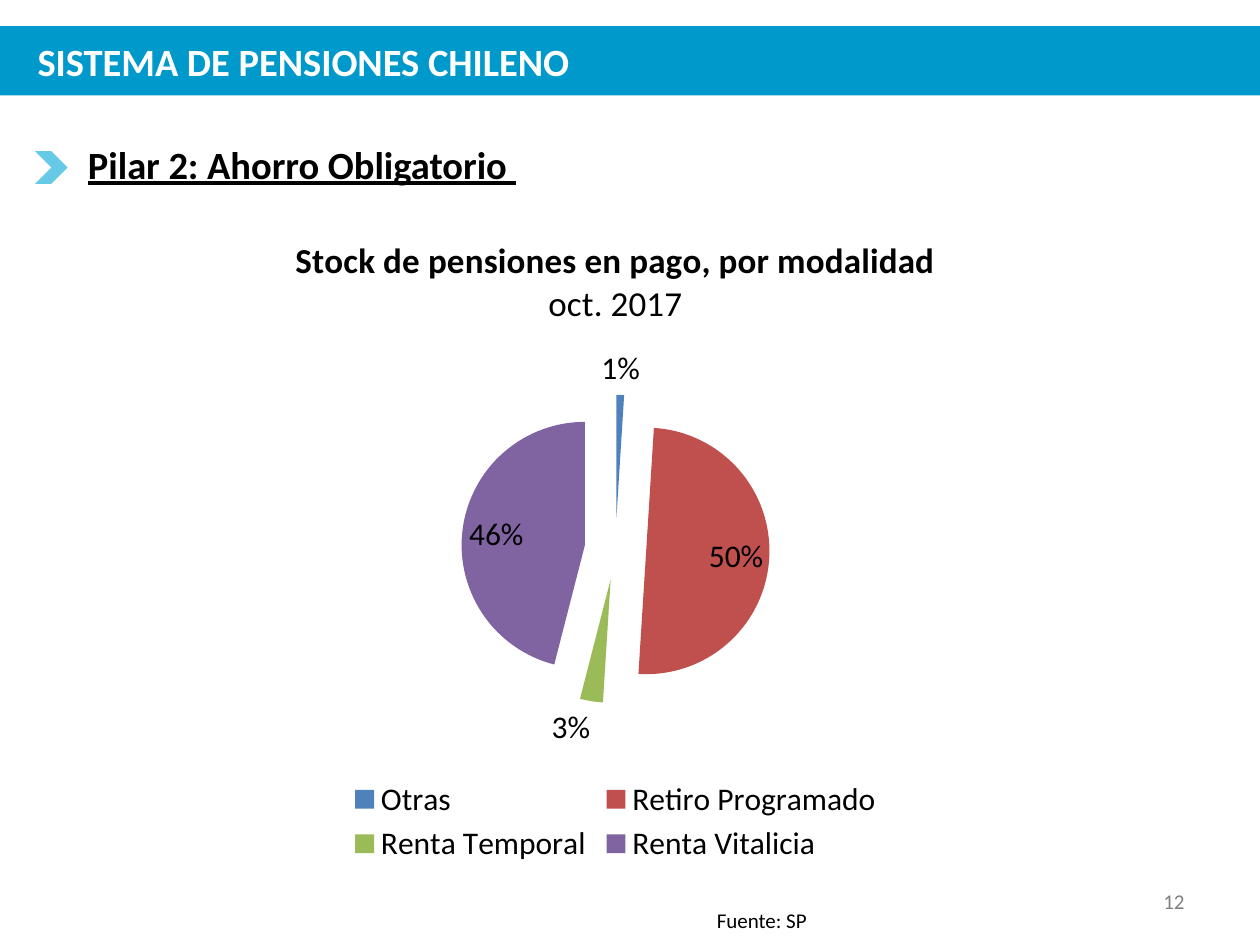
from dataclasses import dataclass

import pptx
import pptx.chart.data
import pptx.dml.color
import pptx.enum.chart
import pptx.enum.shapes
import pptx.enum.text
import pptx.oxml
import pptx.oxml.ns
import pptx.util

Pt = pptx.util.Pt
RGBColor = pptx.dml.color.RGBColor
Shape = pptx.enum.shapes.MSO_SHAPE
Align = pptx.enum.text.PP_ALIGN
Anchor = pptx.enum.text.MSO_ANCHOR

FONT = "Calibri"
BLACK = RGBColor(0, 0, 0)
WHITE = RGBColor(0xFF, 0xFF, 0xFF)
GRAY = RGBColor(0x80, 0x80, 0x80)
BAND = RGBColor(0x00, 0x99, 0xCC)
CHEVRON = RGBColor(0x00, 0xA6, 0xD6)
BLUE = RGBColor(0x4F, 0x81, 0xBD)
RED = RGBColor(0xC0, 0x50, 0x4D)
GREEN = RGBColor(0x9B, 0xBB, 0x59)
PURPLE = RGBColor(0x80, 0x64, 0xA2)


@dataclass
class Box:
    left: float
    top: float
    width: float
    height: float

    def pts(self) -> list:
        return [Pt(v) for v in (self.left, self.top, self.width, self.height)]


@dataclass
class Label:
    text: str
    box: Box
    size: float
    color: RGBColor = BLACK
    bold: bool = False
    underline: bool = False
    align: Align = Align.LEFT
    anchor: Anchor = Anchor.TOP


@dataclass
class Slice:
    name: str
    percent: int
    color: RGBColor


LABELS = [
    Label("SISTEMA DE PENSIONES CHILENO", Box(14.4, 15, 648, 39.6), 22, WHITE,
          bold=True, anchor=Anchor.MIDDLE),
    Label("Pilar 2: Ahorro Obligatorio ", Box(43.2, 77, 628.5, 34), 22,
          bold=True, underline=True, align=Align.JUSTIFY),
    Label("Fuente: SP", Box(402.5, 514.8, 275, 21.8), 12),
    Label("12", Box(516, 500.5, 168, 28.8), 12, GRAY,
          align=Align.RIGHT, anchor=Anchor.MIDDLE),
]
SLICES = [
    Slice("Otras", 1, BLUE),
    Slice("Retiro Programado", 50, RED),
    Slice("Renta Temporal", 3, GREEN),
    Slice("Renta Vitalicia", 46, PURPLE),
]
TITLE_LINES = [("Stock de pensiones en pago, por modalidad", True), ("oct. 2017", False)]
EXPLOSION = 25


def set_font(font, size: float, color: RGBColor = BLACK, **extra) -> None:
    values = {"name": FONT, "size": Pt(size), **extra}
    for name, value in values.items():
        setattr(font, name, value)
    font.color.rgb = color


def sub_element(parent, tag: str, value: int):
    el = pptx.oxml.parse_xml(f'<{tag} {pptx.oxml.ns.nsdecls(tag[0])} val="{value}"/>')
    parent.append(el)
    return el


def add_filled(s, kind: Shape, box: Box, color: RGBColor, opacity: int = 100) -> None:
    sp = s.shapes.add_shape(kind, *box.pts())
    sp.shadow.inherit = False
    sp.fill.solid()
    sp.fill.fore_color.rgb = color
    sp.line.fill.background()
    if opacity < 100:
        clr = sp.fill._xPr.find(".//" + pptx.oxml.ns.qn("a:srgbClr"))
        sub_element(clr, "a:alpha", opacity * 1000)


def add_label(s, label: Label) -> None:
    tf = s.shapes.add_textbox(*label.box.pts()).text_frame
    tf.word_wrap = True
    tf.vertical_anchor = label.anchor
    p = tf.paragraphs[0]
    p.alignment = label.align
    r = p.add_run()
    r.text = label.text
    set_font(r.font, label.size, label.color, bold=label.bold, underline=label.underline)


def add_pie(s, box: Box) -> None:
    data = pptx.chart.data.CategoryChartData(number_format="0")
    data.categories = [x.name for x in SLICES]
    data.add_series("Series 1", [x.percent for x in SLICES])
    chart = s.shapes.add_chart(pptx.enum.chart.XL_CHART_TYPE.PIE, *box.pts(), data).chart
    set_font(chart.font, 18)

    tf = chart.chart_title.text_frame
    chart.chart_title.include_in_layout = False
    for i, (text, bold) in enumerate(TITLE_LINES):
        p = tf.paragraphs[0] if i == 0 else tf.add_paragraph()
        r = p.add_run()
        r.text = text
        set_font(p.font, 20, bold=bold)
        set_font(r.font, 20, bold=bold)

    chart.has_legend = True
    chart.legend.position = pptx.enum.chart.XL_LEGEND_POSITION.BOTTOM
    chart.legend.include_in_layout = False
    set_font(chart.legend.font, 18)

    plot = chart.plots[0]
    plot.vary_by_categories = True
    plot.has_data_labels = True
    labels = plot.data_labels
    formats = {
        "show_percentage": True,
        "show_value": False,
        "number_format": "0%",
        "number_format_is_linked": False,
        "position": pptx.enum.chart.XL_LABEL_POSITION.BEST_FIT,
    }
    for name, value in formats.items():
        setattr(labels, name, value)
    set_font(labels.font, 18)

    series = plot.series[0]
    for i, item in enumerate(SLICES):
        fmt = series.points[i].format
        fmt.fill.solid()
        fmt.fill.fore_color.rgb = item.color
        fmt.line.fill.background()
    for pt in series._element.findall(pptx.oxml.ns.qn("c:dPt")):
        explosion = sub_element(pt, "c:explosion", EXPLOSION)
        pt.find(pptx.oxml.ns.qn("c:spPr")).addprevious(explosion)


def main() -> None:
    prs = pptx.Presentation()
    prs.slide_width, prs.slide_height = Pt(720), Pt(540)
    s = prs.slides.add_slide(prs.slide_layouts[6])
    add_filled(s, Shape.RECTANGLE, Box(0, 15, 720, 39.6), BAND)
    add_filled(s, Shape.CHEVRON, Box(20, 86.4, 18.7, 18.7), CHEVRON, opacity=60)
    add_pie(s, Box(65.5, 121.7, 572.4, 375))
    for label in LABELS:
        add_label(s, label)
    prs.save("out.pptx")


if __name__ == "__main__":
    main()
